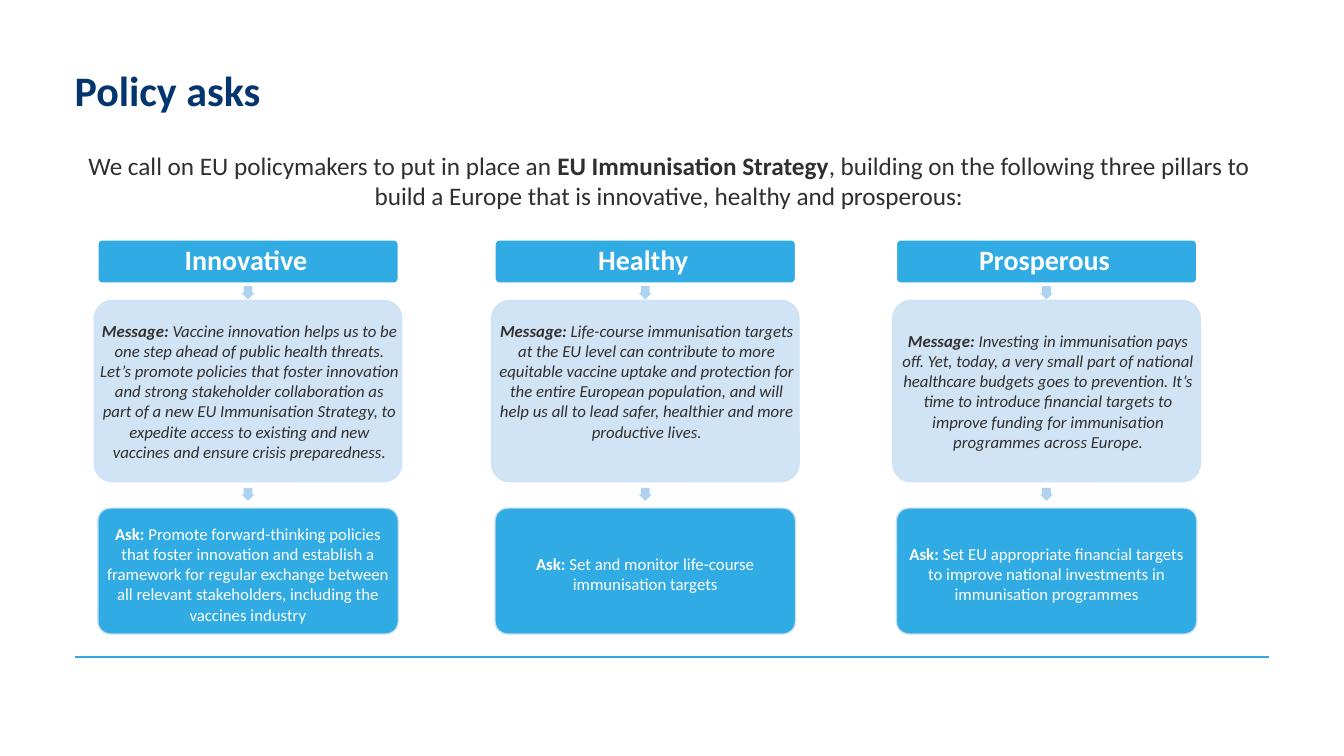
from lxml import etree
from pptx import Presentation
from pptx.dml.color import RGBColor
from pptx.enum.shapes import MSO_CONNECTOR, MSO_SHAPE
from pptx.enum.text import MSO_ANCHOR, PP_ALIGN
from pptx.oxml.ns import qn
from pptx.util import Inches, Pt

TITLE = "Policy asks"
INTRO = [
    ("We call on EU policymakers to put in place an ", False),
    ("EU Immunisation Strategy", True),
    (", building on the following three pillars to build a Europe that is "
     "innovative, healthy and prosperous:", False),
]
# left edge, heading, message, space kept free below the message, ask
PILLARS = [
    (0.97, "Innovative",
     "Vaccine innovation helps us to be one step ahead of public health threats. "
     "Let’s promote policies that foster innovation and strong stakeholder "
     "collaboration as part of a new EU Immunisation Strategy, to expedite access "
     "to existing and new vaccines and ensure crisis preparedness.", 0.02,
     "Promote forward-thinking policies that foster innovation and establish a "
     "framework for regular exchange between all relevant stakeholders, including "
     "the vaccines industry"),
    (4.91, "Healthy",
     "Life-course immunisation targets at the EU level can contribute to more "
     "equitable vaccine uptake and protection for the entire European population, "
     "and will help us all to lead safer, healthier and more productive lives.", 0.22,
     "Set and monitor life-course immunisation targets"),
    (8.89, "Prosperous",
     "Investing in immunisation pays off. Yet, today, a very small part of national "
     "healthcare budgets goes to prevention. It’s time to introduce financial targets "
     "to improve funding for immunisation programmes across Europe.", 0.02,
     "Set EU appropriate financial targets to improve national investments in "
     "immunisation programmes"),
]

FONT = "Calibri"
NAVY = RGBColor(0x03, 0x36, 0x6E)
INK = RGBColor(0x33, 0x2E, 0x2E)
BLUE = RGBColor(0x30, 0xAB, 0xE3)
PALE = RGBColor(0xCD, 0xE2, 0xF4)
ARROW = RGBColor(0xAE, 0xD2, 0xEF)
WHITE = RGBColor(0xFF, 0xFF, 0xFF)

CARD_W = 2.98
MESSAGE_W = 3.05
ARROW_SIZE = 0.13
ARROW_TOPS = (2.84, 4.84)


def write(shape, runs, size, color, italic=False, align=PP_ALIGN.CENTER,
          anchor=MSO_ANCHOR.MIDDLE, insets=(0.02, 0.02, 0.02, 0.02), spacing=None):
    """Fill the shape's one paragraph with (text, bold) runs."""
    frame = shape.text_frame
    frame.word_wrap = True
    frame.vertical_anchor = anchor
    (frame.margin_left, frame.margin_top,
     frame.margin_right, frame.margin_bottom) = map(Inches, insets)
    paragraph = frame.paragraphs[0]
    paragraph.alignment = align
    if spacing:
        paragraph.line_spacing = spacing
    for text, bold in runs:
        run = paragraph.add_run()
        run.text = text
        font = run.font
        font.name, font.size, font.bold, font.italic = FONT, Pt(size), bold, italic
        font.color.rgb = color


def add_block(kind, left, top, width, height, fill, line=None):
    block = slide.shapes.add_shape(kind, *map(Inches, (left, top, width, height)))
    block.shadow.inherit = False
    block.fill.solid()
    block.fill.fore_color.rgb = fill
    if line is None:
        block.line.fill.background()
    else:
        block.line.color.rgb = line
        block.line.width = Pt(1)
    return block


def add_card(left, top, width, height, fill, line):
    card = add_block(MSO_SHAPE.ROUNDED_RECTANGLE, left, top, width, height, fill, line)
    card.adjustments[0] = 0.1
    # Pale colours are slightly see-through
    for color in card._element.spPr.iter(qn("a:srgbClr")):
        if color.get("val") == str(PALE):
            etree.SubElement(color, qn("a:alpha")).set("val", "90000")
    return card


prs = Presentation()
prs.slide_width, prs.slide_height = Inches(13.33), Inches(7.5)
slide = prs.slides.add_slide(prs.slide_layouts[5])

# Title and introduction
title = slide.shapes.title
title.left, title.top, title.width, title.height = map(Inches, (0.74, 0.7, 11.84, 0.5))
write(title, [(TITLE, True)], 30, NAVY, align=PP_ALIGN.LEFT,
      anchor=MSO_ANCHOR.TOP, insets=(0, 0, 0, 0), spacing=0.9)
intro = slide.shapes.add_textbox(*map(Inches, (0.68, 1.44, 11.91, 0.71)))
write(intro, INTRO, 18, INK, anchor=MSO_ANCHOR.TOP, insets=(0.1, 0.05, 0.1, 0.05))

# Footer rule
rule = slide.shapes.add_connector(
    MSO_CONNECTOR.STRAIGHT, *map(Inches, (0.74, 6.52, 12.59, 6.52)))
rule.line.color.rgb = BLUE
rule.line.width = Pt(1.5)
etree.SubElement(rule._element.spPr, qn("a:effectLst"))

# Pillars: heading, message and ask, joined by arrows
for left, heading, message, space_below, ask in PILLARS:
    center = left + CARD_W / 2

    heading_card = add_card(left, 2.38, CARD_W, 0.43, BLUE, WHITE)
    write(heading_card, [(heading, True)], 20, WHITE,
          insets=(0.03, 0.03, 0.07, 0.03), spacing=0.9)

    for top in ARROW_TOPS:
        arrow = add_block(MSO_SHAPE.DOWN_ARROW, center - ARROW_SIZE / 2, top,
                          ARROW_SIZE, ARROW_SIZE, ARROW)
        arrow.adjustments[0] = 0.667

    # The message needs more width than a rounded card gives its own text
    add_card(center - MESSAGE_W / 2, 2.98, MESSAGE_W, 1.8, PALE, PALE)
    message_text = slide.shapes.add_textbox(*map(Inches, (left, 3.03, 3.01, 1.7)))
    write(message_text, [("Message: ", True), (message, False)], 12, INK, italic=True,
          insets=(0.02, 0.02, 0.02, space_below))

    ask_card = add_card(left, 5.04, CARD_W, 1.25, BLUE, PALE)
    write(ask_card, [("Ask: ", True), (ask, False)], 12, WHITE,
          insets=(0.04, 0.06, 0.04, 0))

prs.save("out.pptx")
